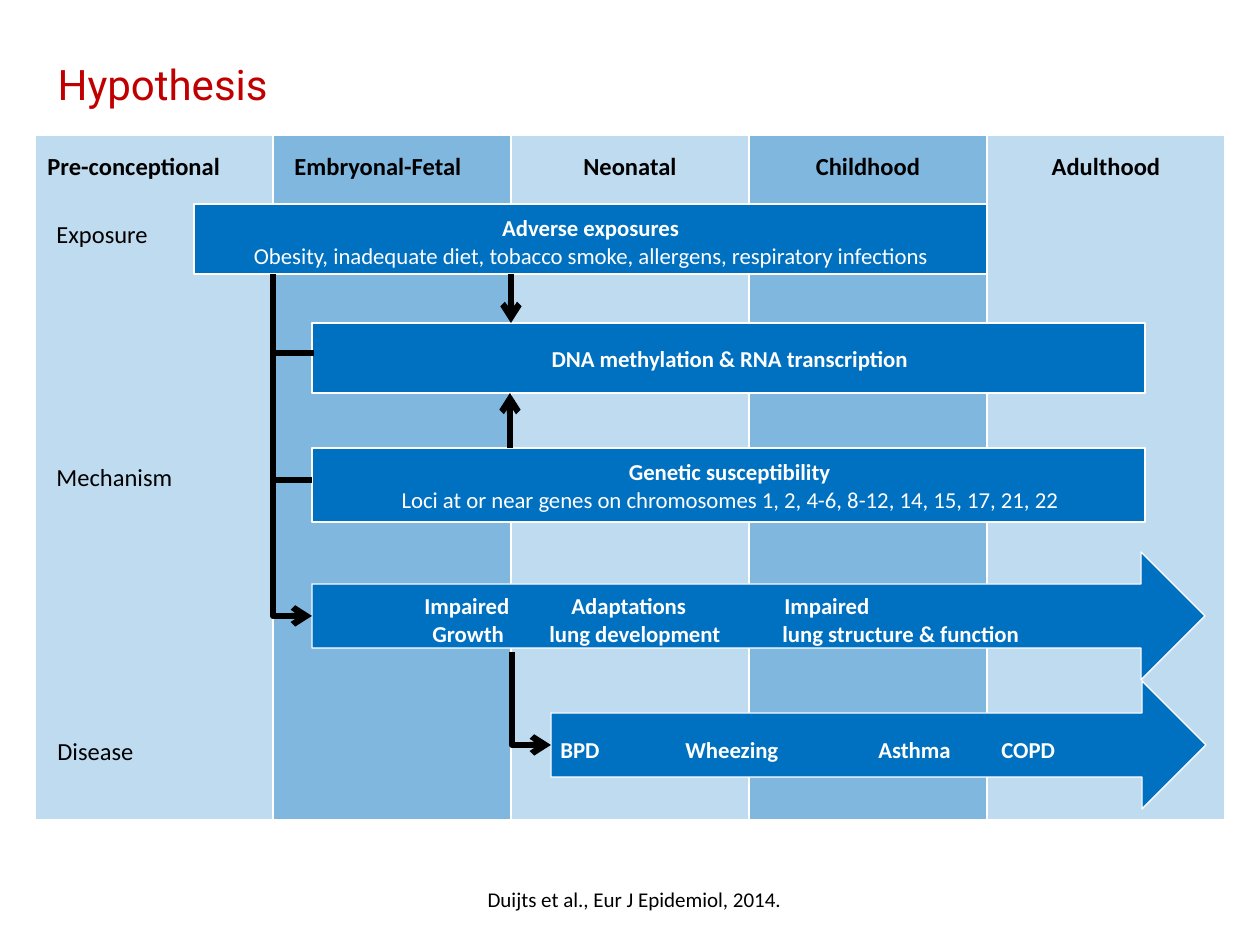
from lxml.etree import SubElement
from pptx import Presentation
from pptx.dml.color import RGBColor
from pptx.enum.shapes import MSO_CONNECTOR, MSO_SHAPE
from pptx.enum.text import MSO_ANCHOR, MSO_AUTO_SIZE, PP_ALIGN
from pptx.oxml import parse_xml
from pptx.oxml.ns import nsdecls, qn
from pptx.util import Pt

PX = 914400 // 126
BLUE = RGBColor(0x00, 0x70, 0xC0)
RED = RGBColor(0xC0, 0x00, 0x00)
BLACK = RGBColor(0, 0, 0)
WHITE = RGBColor(255, 255, 255)
LEFT, CENTER = PP_ALIGN.LEFT, PP_ALIGN.CENTER

TITLE = "Hypothesis"
SOURCE = "Duijts et al., Eur J Epidemiol, 2014."
COL_X, COL_Y, COL_W, COL_H = 35, 135, 238, 685
PHASES = [
    ("Pre-conceptional", LEFT, 0),
    ("Embryonal-Fetal", LEFT, 9),
    ("Neonatal", CENTER, 9),
    ("Childhood", CENTER, 9),
    ("Adulthood", CENTER, 9),
]
ROWS = [("Exposure", 44, 213), ("Mechanism", 44, 456), ("Disease", 45, 730)]
BARS = [
    (MSO_SHAPE.RIGHT_ARROW, 551, 681, 655, 128),
    (MSO_SHAPE.RIGHT_ARROW, 312, 552, 893, 128),
    (MSO_SHAPE.RECTANGLE, 312, 448, 833, 74),
    (MSO_SHAPE.RECTANGLE, 312, 323, 833, 70),
    (MSO_SHAPE.RECTANGLE, 194, 204, 793, 70),
]
BAR_TEXTS = [
    (194, 208, 68, ["Adverse exposures",
                    "Obesity, inadequate diet, tobacco smoke, allergens, respiratory infections"]),
    (333, 339, 40, ["DNA methylation & RNA transcription"]),
    (333, 452, 68, ["Genetic susceptibility",
                    "Loci at or near genes on chromosomes 1, 2, 4-6, 8-12, 14, 15, 17, 21, 22"]),
]
ARROW_TEXTS = [
    (328, 586, 843, 68, [
        ("\tImpaired\tAdaptations\tImpaired", (84, 231, 444)),
        ("\tGrowth\tlung development\tlung structure & function", (92, 209, 442)),
    ]),
    (548, 730, 595, 40, [("BPD\tWheezing\tAsthma\tCOPD", (125, 318, 441))]),
]
ELBOWS = [(273, 274, 312, 616), (512, 652, 551, 745)]
LINES = [
    (273, 480, 312, 480, False),
    (273, 353, 314, 353, False),
    (511, 274, 511, 323, True),
    (510, 448, 510, 393, True),
]


def px(*values):
    return [round(v * PX) for v in values]


def add_block(shapes, kind, x, y, w, h, alpha=None):
    sp = shapes.add_shape(kind, *px(x, y, w, h))
    sp.shadow.inherit = False
    sp.fill.solid()
    sp.fill.fore_color.rgb = BLUE
    sp.line.color.rgb = WHITE
    sp.line.width = Pt(0.75)
    if alpha:
        color = sp.fill._xPr.find(qn("a:solidFill"))[0]
        SubElement(color, qn("a:alpha"), val=str(alpha * 1000))


def set_font(p, size, color, bold=False, name="Calibri"):
    p.font.size = Pt(size)
    p.font.name = name
    p.font.bold = bold
    p.font.color.rgb = color


def add_text(shapes, x, y, w, h, lines, size, color, bolds=(False,), align=LEFT, tabs=()):
    tf = shapes.add_textbox(*px(x, y, w, h)).text_frame
    tf.word_wrap = True
    tf.auto_size = MSO_AUTO_SIZE.SHAPE_TO_FIT_TEXT
    tf.text = "\n".join(lines)
    for p, bold in zip(tf.paragraphs, bolds):
        p.alignment = align
        set_font(p, size, color, bold)
    for p, stops in zip(tf.paragraphs, tabs):
        tab_list = parse_xml(f"<a:tabLst {nsdecls('a')}/>")
        for pos in px(*stops):
            SubElement(tab_list, qn("a:tab"), pos=str(pos), algn="l")
        p._p.get_or_add_pPr().insert(0, tab_list)


def add_line(shapes, kind, x1, y1, x2, y2, arrow):
    line = shapes.add_connector(kind, *px(x1, y1, x2, y2))
    line.line.color.rgb = BLACK
    line.line.width = Pt(3.5)
    if arrow:
        SubElement(line.line._get_or_add_ln(), qn("a:tailEnd"), type="arrow")
    SubElement(line._element.spPr, qn("a:effectLst"))
    return line


def add_elbow(shapes, x1, y1, x2, y2):
    w, h = y2 - y1, x2 - x1
    x, y = (x1 + x2 - w) / 2, (y1 + y2 - h) / 2
    line = add_line(shapes, MSO_CONNECTOR.ELBOW, x, y, x + w, y + h, True)
    spPr = line._element.spPr
    spPr.find(qn("a:prstGeom")).set("prst", "bentConnector2")
    xfrm = spPr.find(qn("a:xfrm"))
    xfrm.set("rot", str(270 * 60000))
    xfrm.set("flipH", "1")


def main():
    prs = Presentation()
    prs.slide_width, prs.slide_height = px(1260, 945)
    s = prs.slides.add_slide(prs.slide_layouts[5])
    shapes = s.shapes

    title = shapes.title
    title.left, title.top, title.width, title.height = px(45, 42, 1173, 84)
    tf = title.text_frame
    tf.text = TITLE
    tf.vertical_anchor = MSO_ANCHOR.MIDDLE
    tf.paragraphs[0].alignment = LEFT
    set_font(tf.paragraphs[0], 24, RED, name="Roboto")

    for i in range(len(PHASES)):
        add_block(shapes, MSO_SHAPE.RECTANGLE, COL_X + i * COL_W, COL_Y,
                  COL_W, COL_H, 50 if i % 2 else 25)
    for i, (phase, align, inset) in enumerate(PHASES):
        add_text(shapes, COL_X + i * COL_W + inset, 145, COL_W - 2 * inset, 43,
                 [phase], 14, BLACK, (True,), align)
    for bar in BARS:
        add_block(shapes, *bar)
    for elbow in ELBOWS:
        add_elbow(shapes, *elbow)
    for line in LINES:
        add_line(shapes, MSO_CONNECTOR.STRAIGHT, *line)
    for label, x, y in ROWS:
        add_text(shapes, x, y, 218, 43, [label], 14, BLACK)
    for x, y, h, lines in BAR_TEXTS:
        add_text(shapes, x, y, 793, h, lines, 13, WHITE, (True, False), CENTER)
    for x, y, w, h, rows in ARROW_TEXTS:
        lines, tabs = zip(*rows)
        add_text(shapes, x, y, w, h, lines, 13, WHITE, (True, True), tabs=tabs)
    add_text(shapes, 213, 880, 843, 38, [SOURCE], 12, BLACK, align=CENTER)

    prs.save("out.pptx")


if __name__ == "__main__":
    main()
